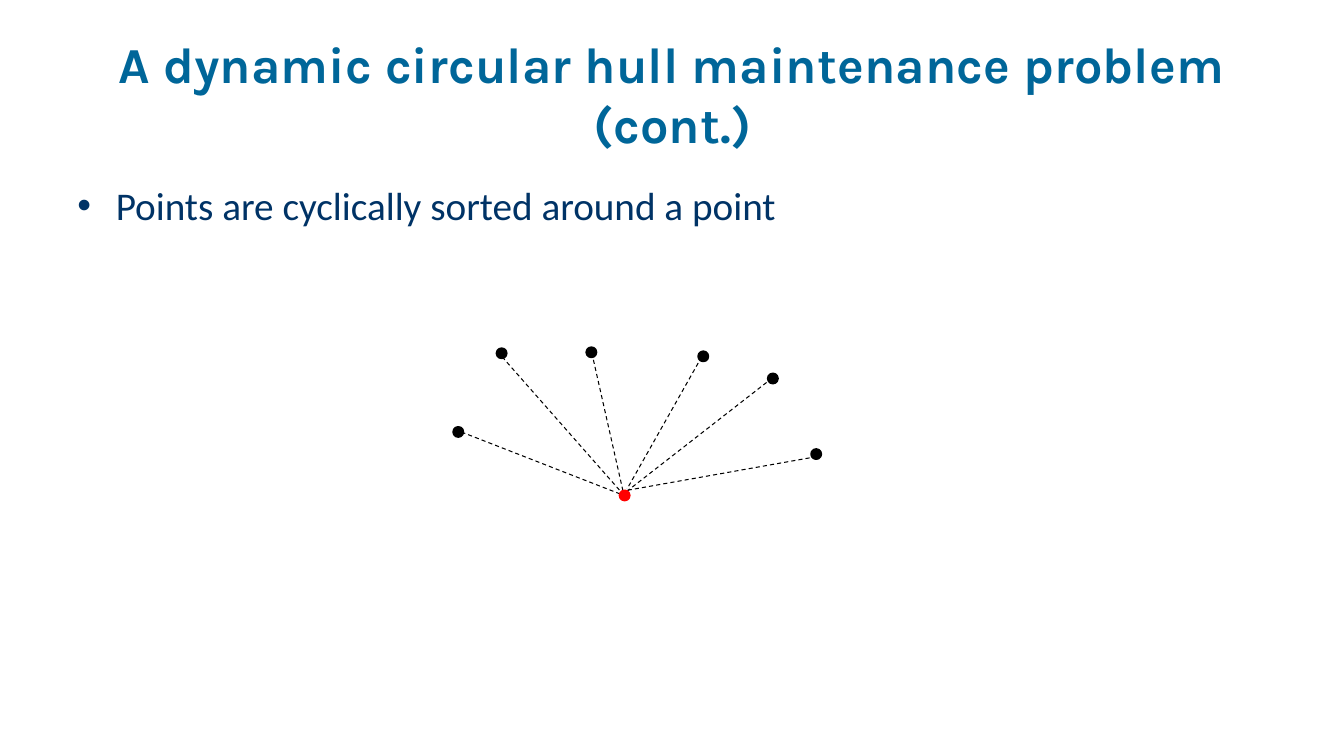
import pptx
import pptx.util
import pptx.dml.color
import pptx.enum.dml
import pptx.enum.shapes
import pptx.enum.text
import pptx.oxml.ns
import lxml.etree

RGB = pptx.dml.color.RGBColor
TEAL = RGB(0x00, 0x66, 0x99)
NAVY = RGB(0x00, 0x33, 0x66)
BLACK = RGB(0x00, 0x00, 0x00)
RED = RGB(0xFF, 0x00, 0x00)

COLS, ROWS = 1333, 750
CELL = pptx.util.Inches(0.01)
DOT = 9
HUB = (165, 142)
RAYS = [
    ((0, 79), (1, 81), (170, 147)),
    ((43, 1), (48, 9), (166, 143)),
    ((132, 0), (137, 5), (169, 147)),
    ((243, 4), (246, 9), (172, 140)),
    ((312, 26), (316, 30), (171, 143)),
    ((355, 101), (360, 108), (169, 142)),
]


def child(parent, tag, **attrs):
    """Append a drawing element to its parent."""
    return lxml.etree.SubElement(parent, pptx.oxml.ns.qn(tag), **attrs)


def grid(*cells):
    """Turn counts of grid cells into lengths."""
    return [n * CELL for n in cells]


def write(frame, text, size, font, color, bold=False, space=0, before=0,
          align=pptx.enum.text.PP_ALIGN.LEFT,
          anchor=pptx.enum.text.MSO_ANCHOR.TOP):
    """Write one formatted paragraph and return it."""
    frame.word_wrap = True
    frame.auto_size = pptx.enum.text.MSO_AUTO_SIZE.NONE
    frame.vertical_anchor = anchor
    para = frame.paragraphs[0]
    para.alignment = align
    para.space_before = pptx.util.Pt(before)
    run = para.add_run()
    run.text = text
    run.font.size = pptx.util.Pt(size)
    run.font.name = font
    run.font.bold = bold
    run.font.color.rgb = color
    if space:
        run.font._element.set("spc", str(round(space * 100)))
    return para


def head(slide, box):
    """Place and format the title."""
    title = slide.shapes.title
    title.left, title.top, title.width, title.height = grid(*box)
    write(title.text_frame,
          "A dynamic circular hull maintenance problem (cont.)",
          36, "Karla", TEAL, bold=True, space=0.1,
          align=pptx.enum.text.PP_ALIGN.CENTER,
          anchor=pptx.enum.text.MSO_ANCHOR.MIDDLE)


def body(slide, box):
    """Place the bulleted statement."""
    area = slide.shapes.add_textbox(*grid(*box))
    para = write(area.text_frame, "Points are cyclically sorted around a point",
                 28, "Calibri", NAVY, before=5.6)
    props = para._p.get_or_add_pPr()
    dent = pptx.util.Inches(0.38)
    props.set("marL", str(dent))
    props.set("indent", str(-dent))
    child(props, "a:buFont", typeface="Arial")
    child(props, "a:buChar", char="•")


def dot(slide, left, top, color):
    """Draw one round point."""
    mark = slide.shapes.add_shape(pptx.enum.shapes.MSO_SHAPE.OVAL,
                                  *grid(left, top, DOT, DOT))
    mark.shadow.inherit = False
    mark.fill.solid()
    mark.fill.fore_color.rgb = color
    mark.line.color.rgb = color
    mark.line.width = pptx.util.Pt(2)


def ray(slide, start, end):
    """Draw one dashed line."""
    line = slide.shapes.add_connector(
        pptx.enum.shapes.MSO_CONNECTOR.STRAIGHT, *grid(*start, *end))
    line.line.color.rgb = BLACK
    line.line.width = pptx.util.Pt(0.75)
    line.line.dash_style = pptx.enum.dml.MSO_LINE.DASH
    child(line._element.spPr, "a:effectLst")


def fan(slide, left, top):
    """Draw the points, their rays and the hub from a corner."""
    def shift(spot):
        return left + spot[0], top + spot[1]

    for spot, _, _ in RAYS:
        dot(slide, *shift(spot), BLACK)
    for _, start, end in RAYS:
        ray(slide, shift(start), shift(end))
    dot(slide, *shift(HUB), RED)


def main():
    """Build and save the slide."""
    deck = pptx.Presentation()
    deck.slide_width, deck.slide_height = grid(COLS, ROWS)
    slide = deck.slides.add_slide(deck.slide_layouts.get_by_name("Title Only"))
    head(slide, (67, 30, 1200, 125))
    body(slide, (67, 175, 1200, 138))
    fan(slide, 450, 345)
    deck.save("out.pptx")


if __name__ == "__main__":
    main()
